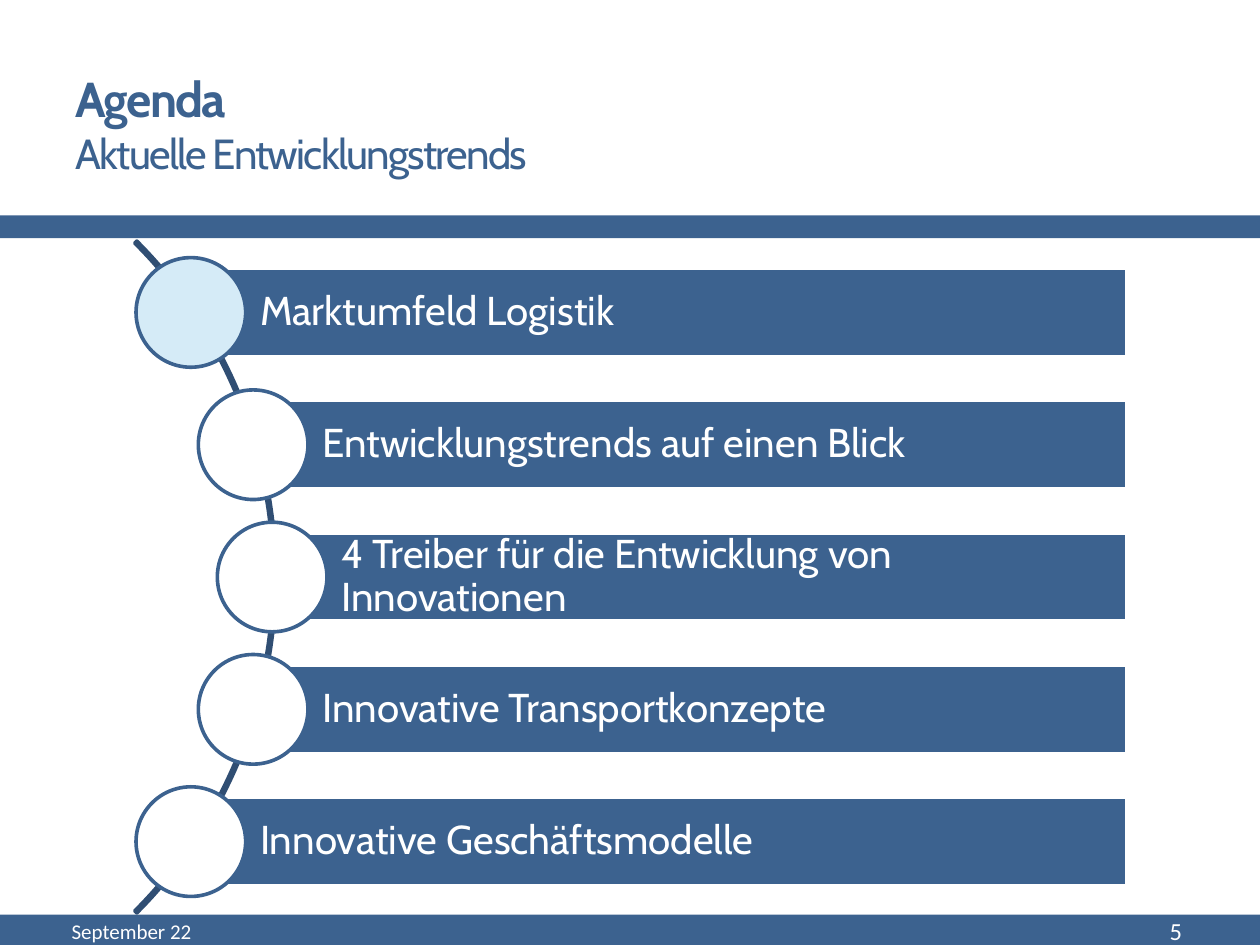
"""Build the agenda slide with five topics strung along an arc."""
from dataclasses import dataclass
from math import sqrt

from pptx import Presentation
from pptx.dml.color import RGBColor
from pptx.enum.shapes import MSO_SHAPE
from pptx.enum.text import MSO_ANCHOR, MSO_AUTO_SIZE, PP_ALIGN
from pptx.util import Inches, Pt

HEADING, SUBHEADING = "Agenda", "Aktuelle Entwicklungstrends"
TOPICS = [
    "Marktumfeld Logistik",
    "Entwicklungstrends auf einen Blick",
    "4 Treiber für die Entwicklung von Innovationen",
    "Innovative Transportkonzepte",
    "Innovative Geschäftsmodelle",
]
CURRENT_TOPIC = 0
BANDS = [(-0.02, 1.71, 10.12, 0.18), (-0.04, 7.26, 10.16, 0.5)]
FOOTER = [
    ("September 22", (0.47, 7.21, 3.17, 0.36), 12, PP_ALIGN.LEFT),
    ("5", (8.31, 7.21, 1.17, 0.36), 14, PP_ALIGN.RIGHT),
]

ARC_X, ARC_Y, ARC_RADIUS = -1.58, 4.58, 3.77
TRACK_RADIUS = 3.74
PITCH, BAR_HEIGHT, BAR_RIGHT, MARKER = 1.05, 0.7, 8.94, 0.87


@dataclass(frozen=True)
class Theme:
    blue: RGBColor = RGBColor(0x3C, 0x62, 0x8F)
    dark: RGBColor = RGBColor(0x30, 0x4E, 0x73)
    pale: RGBColor = RGBColor(0xD5, 0xEB, 0xF7)
    white: RGBColor = RGBColor(0xFF, 0xFF, 0xFF)
    display: str = "Cabin"
    footer: str = "Calibri"
    heading: int = 28
    subheading: int = 24
    topic: int = 23
    outline: float = 2.08


THEME = Theme()


def set_font(font, name, size, color):
    font.name, font.size, font.color.rgb = name, Pt(size), color


def add_form(slide, kind, box, fill=None, line=None):
    form = slide.shapes.add_shape(kind, *map(Inches, box))
    form.shadow.inherit = False
    if fill is None:
        form.fill.background()
    else:
        form.fill.solid()
        form.fill.fore_color.rgb = fill
    if line is None:
        form.line.fill.background()
    else:
        form.line.color.rgb = line
        form.line.width = Pt(THEME.outline)
    return form


def write(frame, text, name, size, align):
    frame.word_wrap = True
    frame.vertical_anchor = MSO_ANCHOR.MIDDLE
    paragraph = frame.paragraphs[0]
    paragraph.text = text
    paragraph.alignment = align
    set_font(paragraph.font, name, size, THEME.white)
    return paragraph


def add_title(slide):
    title = slide.shapes.title
    title.left, title.top, title.width, title.height = map(Inches, (0.5, 0.44, 5.21, 1.08))
    frame = title.text_frame
    frame.auto_size = MSO_AUTO_SIZE.NONE
    frame.vertical_anchor = MSO_ANCHOR.MIDDLE
    paragraph = frame.paragraphs[0]
    paragraph.alignment = PP_ALIGN.LEFT
    for text, size, bold in ((HEADING, THEME.heading, True), (SUBHEADING, THEME.subheading, False)):
        if paragraph.runs:
            paragraph.add_line_break()
        run = paragraph.add_run()
        run.text = text
        set_font(run.font, THEME.display, size, THEME.blue)
        run.font.bold = bold
        run.font._element.set("spc", "-100")


def add_arc(slide):
    box = (ARC_X - ARC_RADIUS, ARC_Y - ARC_RADIUS, 2 * ARC_RADIUS, 2 * ARC_RADIUS)
    arc = add_form(slide, MSO_SHAPE.BLOCK_ARC, box, line=THEME.dark)
    for index, value in enumerate((189, 27, 0.003)):
        arc.adjustments[index] = value


def add_topic(slide, index, topic):
    offset = (index - (len(TOPICS) - 1) / 2) * PITCH
    x, y = ARC_X + sqrt(TRACK_RADIUS**2 - offset**2), ARC_Y + offset
    bar = add_form(slide, MSO_SHAPE.RECTANGLE, (x, y - BAR_HEIGHT / 2, BAR_RIGHT - x, BAR_HEIGHT),
                   THEME.blue, THEME.white)
    frame = bar.text_frame
    frame.margin_left = Inches(0.55)
    frame.margin_top = frame.margin_right = frame.margin_bottom = Inches(0.06)
    write(frame, topic, THEME.display, THEME.topic, PP_ALIGN.LEFT).line_spacing = 0.9
    add_form(slide, MSO_SHAPE.OVAL, (x - MARKER / 2, y - MARKER / 2, MARKER, MARKER),
             THEME.pale if index == CURRENT_TOPIC else THEME.white, THEME.blue)


def main():
    deck = Presentation()
    deck.slide_width, deck.slide_height = Inches(10), Inches(7.5)
    slide = deck.slides.add_slide(deck.slide_layouts.get_by_name("Title Only"))
    for band in BANDS:
        add_form(slide, MSO_SHAPE.RECTANGLE, band, THEME.blue)
    add_title(slide)
    for text, box, size, align in FOOTER:
        note = slide.shapes.add_textbox(*map(Inches, box))
        write(note.text_frame, text, THEME.footer, size, align)
    add_arc(slide)
    for index, topic in enumerate(TOPICS):
        add_topic(slide, index, topic)
    deck.save("out.pptx")


if __name__ == "__main__":
    main()
